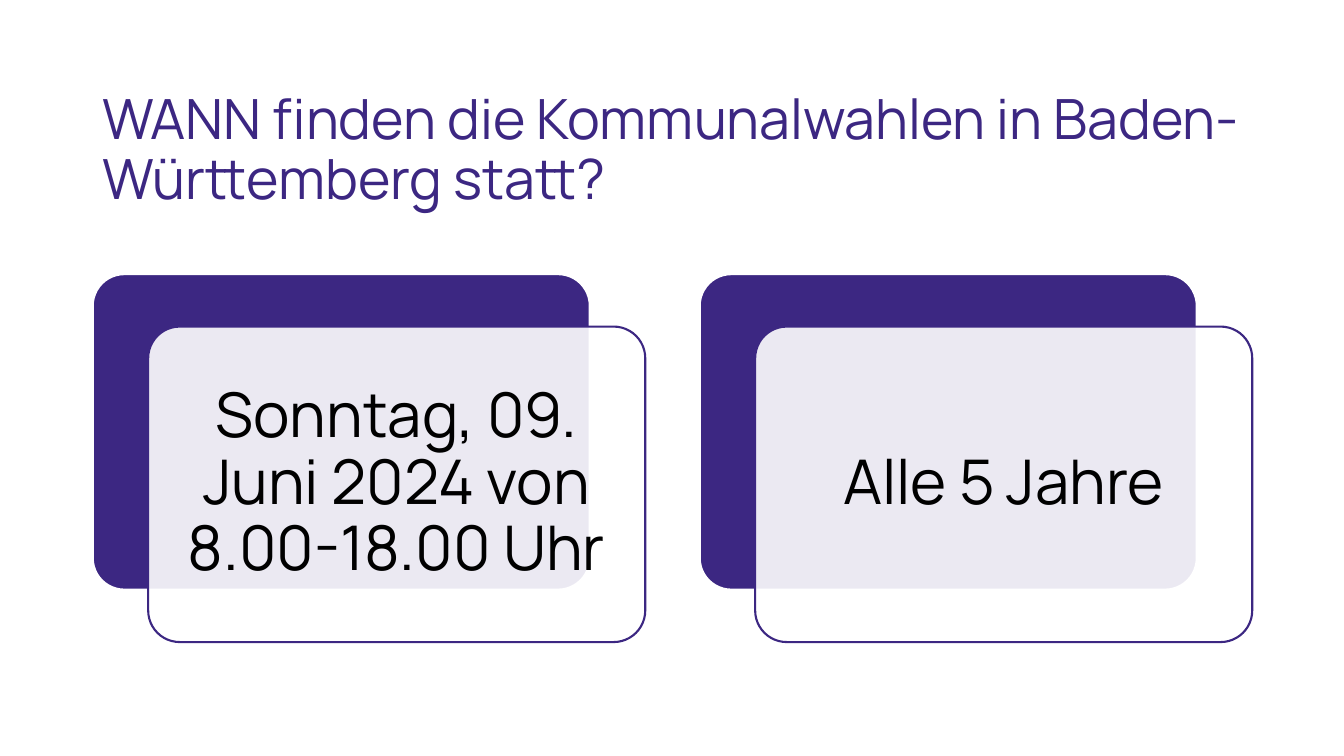
from lxml import etree
from pptx import Presentation
from pptx import util as u
from pptx.dml.color import RGBColor
from pptx.enum import shapes, text
from pptx.oxml.ns import qn

COLORS = {"violet": "3C2782", "white": "FFFFFF", "black": "000000"}
FONT = "Manrope"
WIDTH, HEIGHT = 13.33, 7.5

# Layout in inches
LEFT, TITLE_TOP, TITLE_W, TITLE_H = 0.92, 0.88, 11.5, 1.24
CARD_TOP, CARD_W, CARD_H = 2.72, 4.93, 3.13
CARD_PITCH = 6.02
SHIFT_X, SHIFT_Y = 0.55, 0.52
INSET = 0.09
ANSWERS = ["Sonntag, 09. Juni 2024 von 8.00-18.00 Uhr", "Alle 5 Jahre"]


def color(name):
    return RGBColor.from_string(COLORS[name])


def inches(*lengths):
    return [u.Inches(length) for length in lengths]


def add_text(slide, box, content, size, color_name, align, margin=None):
    tf = slide.shapes.add_textbox(*inches(*box)).text_frame
    tf.word_wrap = True
    tf.vertical_anchor = text.MSO_ANCHOR.MIDDLE
    if margin is not None:
        tf.margin_left = tf.margin_right = u.Inches(margin)
        tf.margin_top = tf.margin_bottom = u.Inches(margin)
    tf.text = content
    p = tf.paragraphs[0]
    p.alignment = align
    p.line_spacing = 0.9
    font = p.runs[0].font
    font.name, font.size = FONT, u.Pt(size)
    font.color.rgb = color(color_name)


def add_panel(slide, box, fill, line, opacity=None):
    sp = slide.shapes.add_shape(shapes.MSO_SHAPE.ROUNDED_RECTANGLE, *inches(*box))
    sp.adjustments[0] = 0.1
    sp.shadow.inherit = False
    sp.fill.solid()
    sp.fill.fore_color.rgb = color(fill)
    sp.line.color.rgb = color(line)
    sp.line.width = u.Pt(1.5)
    if opacity is not None:
        clr = sp._element.spPr.find(qn("a:solidFill")).find(qn("a:srgbClr"))
        etree.SubElement(clr, qn("a:alpha")).set("val", str(opacity * 1000))


def add_card(slide, left, answer):
    front_x, front_y = left + SHIFT_X, CARD_TOP + SHIFT_Y
    add_panel(slide, (left, CARD_TOP, CARD_W, CARD_H), "violet", "white")
    add_panel(slide, (front_x, front_y, CARD_W, CARD_H), "white", "violet", opacity=90)
    box = (front_x + INSET, front_y + INSET, CARD_W - 2 * INSET, CARD_H - 2 * INSET)
    add_text(slide, box, answer, 44, "black", text.PP_ALIGN.CENTER, margin=0.18)


def main():
    prs = Presentation()
    prs.slide_width, prs.slide_height = inches(WIDTH, HEIGHT)
    slide = prs.slides.add_slide(prs.slide_layouts[6])

    # Title
    add_text(slide, (LEFT, TITLE_TOP, TITLE_W, TITLE_H),
             "WANN finden die Kommunalwahlen in Baden-Württemberg statt?",
             39.6, "violet", text.PP_ALIGN.LEFT)

    # Answer cards
    for i, answer in enumerate(ANSWERS):
        add_card(slide, LEFT + i * CARD_PITCH, answer)

    prs.save("out.pptx")


if __name__ == "__main__":
    main()
